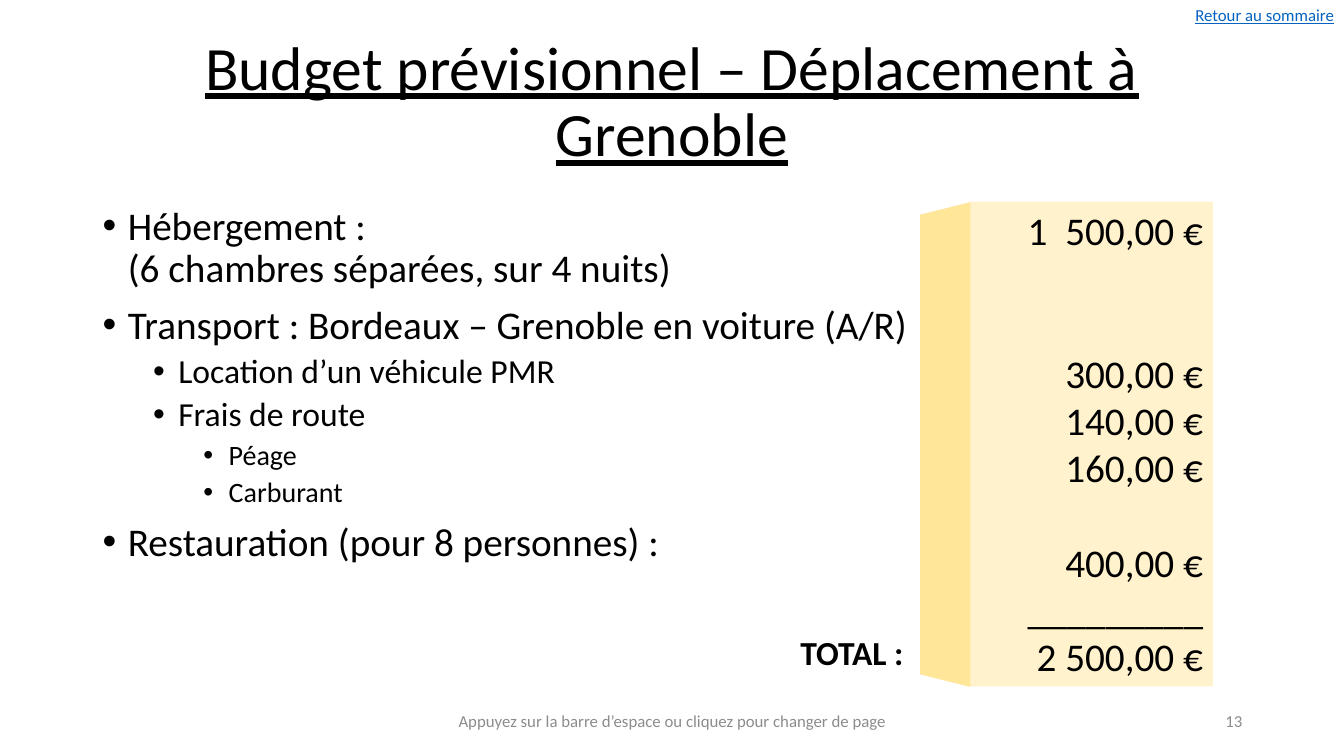
from pptx import Presentation
from pptx.dml.color import RGBColor
from pptx.enum.shapes import MSO_SHAPE as Shape
from pptx.enum.text import MSO_ANCHOR as Anchor, PP_ALIGN as Align
from pptx.oxml.ns import qn
from pptx.util import Inches, Pt
from lxml.etree import SubElement

COLORS = {"text": "000000", "muted": "8C8C8C", "link": "0563C1",
          "panel": "FFF2CC", "panel_side": "FFE699"}
FONT = "Calibri"
AMOUNT_SIZE = 28
AMOUNT_LINE = 34.2  # height of one line of amounts, in points

# Font size and space before, by outline level
LEVELS = [(28, 10), (24, 5), (20, 5)]
EXPENSES = [
    (0, "Hébergement :\n(6 chambres séparées, sur 4 nuits)"),
    (0, "Transport : Bordeaux – Grenoble en voiture (A/R)"),
    (1, "Location d’un véhicule PMR"),
    (1, "Frais de route"),
    (2, "Péage"),
    (2, "Carburant"),
    (0, "Restauration (pour 8 personnes) :"),
]
# Lines skipped above each amount, and the amount
AMOUNTS = [(0, "1  500,00 €"), (2, "300,00 €"), (0, "140,00 €"), (0, "160,00 €"),
           (1, "400,00 €"), (0, "_________"), (0, "2 500,00 €")]


def add_span(para, text, size, color="text", bold=False, underline=False):
    span = para.add_run()
    span.text = text
    font = span.font
    font.name, font.size = FONT, Pt(size)
    font.bold, font.underline = bold, underline
    font.color.rgb = RGBColor.from_string(COLORS[color])


def add_text_box(page, place, anchor=Anchor.TOP):
    box = page.shapes.add_textbox(*map(Inches, place))
    box.text_frame.word_wrap = True
    box.text_frame.vertical_anchor = anchor
    return box.text_frame


def add_label(page, place, text, size, align=Align.LEFT, anchor=Anchor.TOP,
              spacing=1.0, **style):
    para = add_text_box(page, place, anchor).paragraphs[0]
    para.alignment, para.line_spacing = align, spacing
    add_span(para, text, size, **style)


def add_block(page, kind, place, color):
    block = page.shapes.add_shape(kind, *map(Inches, place))
    block.shadow.inherit = False
    block.fill.solid()
    block.fill.fore_color.rgb = RGBColor.from_string(COLORS[color])
    block.line.fill.background()
    return block


def next_paragraph(frame, index):
    return frame.add_paragraph() if index else frame.paragraphs[0]


def set_bullet(para, level):
    properties = para._p.get_or_add_pPr()
    properties.set("marL", str(Inches(0.25 + 0.5 * level)))
    properties.set("indent", str(Inches(-0.25)))
    SubElement(properties, qn("a:buFont")).set("typeface", "Arial")
    SubElement(properties, qn("a:buChar")).set("char", "•")


def add_expenses(page, place):
    frame = add_text_box(page, place)
    for index, (level, text) in enumerate(EXPENSES):
        size, space = LEVELS[level]
        para = next_paragraph(frame, index)
        para.level, para.line_spacing, para.space_before = level, 0.9, Pt(space)
        set_bullet(para, level)
        for number, line in enumerate(text.split("\n")):
            if number:
                para.add_line_break()
            add_span(para, line, size)


def add_amounts(page, place):
    frame = add_block(page, Shape.RECTANGLE, place, "panel").text_frame
    frame.word_wrap = True
    frame.vertical_anchor = Anchor.TOP
    for index, (skipped, amount) in enumerate(AMOUNTS):
        para = next_paragraph(frame, index)
        para.alignment = Align.RIGHT
        para.space_before = Pt(skipped * AMOUNT_LINE)
        add_span(para, amount, AMOUNT_SIZE)


def main():
    deck = Presentation()
    deck.slide_width, deck.slide_height = Inches(13.33), Inches(7.5)
    page = deck.slides.add_slide(deck.slide_layouts[6])

    add_label(page, (0.74, 0.3, 11.85, 1.45),
              "Budget prévisionnel – Déplacement à Grenoble", 44,
              Align.CENTER, Anchor.MIDDLE, spacing=0.9, underline=True)
    add_expenses(page, (0.92, 2, 11.5, 4.76))
    add_amounts(page, (9.62, 2, 2.41, 4.81))
    side = add_block(page, Shape.TRAPEZOID, (6.97, 4.16, 4.81, 0.5), "panel_side")
    side.rotation = 270

    add_label(page, (9.42, 6.95, 3, 0.4), "13", 12,
              Align.RIGHT, Anchor.MIDDLE, color="muted")
    add_label(page, (4.42, 6.95, 4.5, 0.4),
              "Appuyez sur la barre d’espace ou cliquez pour changer de page", 12,
              Align.CENTER, Anchor.MIDDLE, color="muted")
    add_label(page, (7.84, 6.22, 1.7, 0.5), "TOTAL :", 24, bold=True)
    add_label(page, (11.09, 0, 2.24, 0.3), "Retour au sommaire", 12,
              Align.RIGHT, color="link", underline=True)
    deck.save("out.pptx")


if __name__ == "__main__":
    main()
